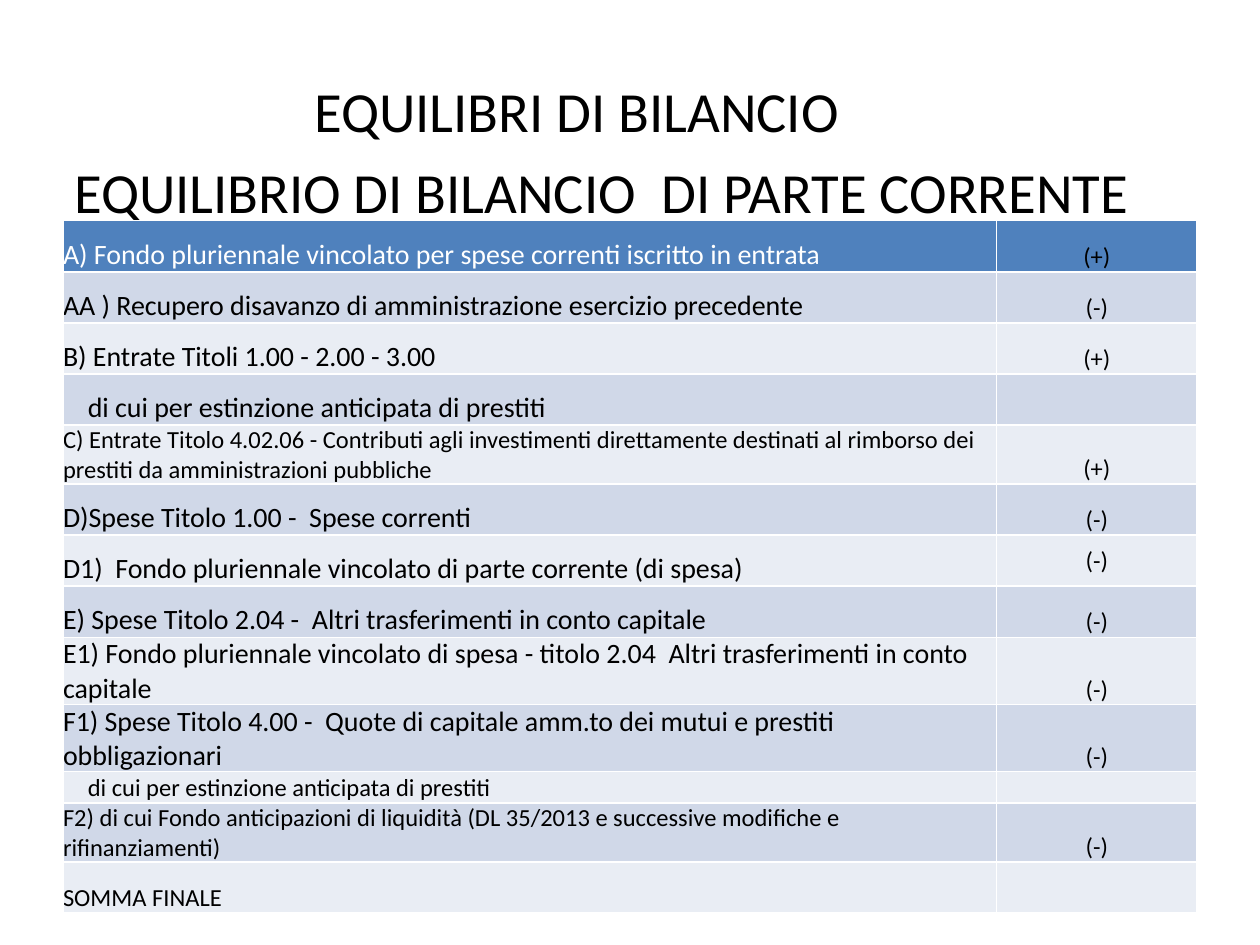
"""Build the slide on the current-account budget balance."""
from dataclasses import dataclass

from pptx import Presentation
from pptx.dml.color import RGBColor
from pptx.enum.text import MSO_ANCHOR, PP_ALIGN
from pptx.util import Cm, Pt


@dataclass(frozen=True)
class Theme:
    font: str = "Calibri"
    title_size: float = 32.4
    large: int = 16
    small: int = 14
    dark: RGBColor = RGBColor(0, 0, 0)
    light: RGBColor = RGBColor(255, 255, 255)
    header: RGBColor = RGBColor(0x4F, 0x81, 0xBD)
    bands: tuple = (RGBColor(0xE9, 0xED, 0xF4), RGBColor(0xD0, 0xD8, 0xE8))


THEME = Theme()
LARGE, SMALL = THEME.large, THEME.small
ROW_HEIGHT, LOW_ROW_HEIGHT = 1.03, 0.63
INDENT = 0.5
TITLE_LINES = (
    ("EQUILIBRI DI BILANCIO", 0),
    ("EQUILIBRIO DI BILANCIO  DI PARTE CORRENTE", 1),
)
BALANCE_ROWS = (
    ("A) Fondo pluriennale vincolato per spese correnti iscritto in entrata", "(+)", LARGE),
    ("AA ) Recupero disavanzo di amministrazione esercizio precedente", "(-)", LARGE),
    ("B) Entrate Titoli 1.00 - 2.00 - 3.00", "(+)", LARGE),
    ("di cui per estinzione anticipata di prestiti", "", LARGE),
    ("C) Entrate Titolo 4.02.06 - Contributi agli investimenti direttamente destinati "
     "al rimborso dei prestiti da amministrazioni pubbliche", "(+)", SMALL),
    ("D)Spese Titolo 1.00 -  Spese correnti", "(-)", LARGE),
    ("D1)  Fondo pluriennale vincolato di parte corrente (di spesa)", "(-)", LARGE),
    ("E) Spese Titolo 2.04 -  Altri trasferimenti in conto capitale", "(-)", LARGE),
    ("E1) Fondo pluriennale vincolato di spesa - titolo 2.04  Altri trasferimenti "
     "in conto capitale", "(-)", LARGE),
    ("F1) Spese Titolo 4.00 -  Quote di capitale amm.to dei mutui e prestiti "
     "obbligazionari", "(-)", LARGE),
    ("di cui per estinzione anticipata di prestiti", "", SMALL),
    ("F2) di cui Fondo anticipazioni di liquidità (DL 35/2013 e successive modifiche "
     "e rifinanziamenti)", "(-)", SMALL),
    ("SOMMA FINALE", "", SMALL),
)


class SlideBuilder:
    def __init__(self, slide, theme):
        self.slide = slide
        self.theme = theme

    def set_text(self, paragraph, text, size, color, alignment):
        paragraph.text = text
        paragraph.alignment = alignment
        for run in paragraph.runs:
            run.font.name = self.theme.font
            run.font.size = Pt(size)
            run.font.bold = False
            run.font.color.rgb = color
        if not text:
            paragraph._p.get_or_add_endParaRPr().set("sz", str(size * 100))

    def indent(self, paragraph, length):
        paragraph._p.get_or_add_pPr().set("marL", str(Cm(length)))

    def add_title(self, lines, left, top, width, height):
        shape = self.slide.shapes.add_textbox(Cm(left), Cm(top), Cm(width), Cm(height))
        frame = shape.text_frame
        frame.word_wrap = True
        frame.margin_left = frame.margin_right = frame.margin_top = frame.margin_bottom = 0
        for index, (text, offset) in enumerate(lines):
            paragraph = frame.add_paragraph() if index else frame.paragraphs[0]
            self.set_text(paragraph, text, self.theme.title_size, self.theme.dark, PP_ALIGN.CENTER)
            if index:
                paragraph.space_before = Pt(7.4)
                self.indent(paragraph, offset)

    def fill_cell(self, cell, text, size, color, fill, alignment):
        cell.margin_left = cell.margin_right = cell.margin_top = cell.margin_bottom = 0
        cell.vertical_anchor = MSO_ANCHOR.BOTTOM
        cell.fill.solid()
        cell.fill.fore_color.rgb = fill
        self.set_text(cell.text_frame.paragraphs[0], text, size, color, alignment)

    def add_balance_table(self, rows, left, top, column_widths):
        theme = self.theme
        table = self.slide.shapes.add_table(
            len(rows), len(column_widths), Cm(left), Cm(top),
            Cm(sum(column_widths)), Cm(ROW_HEIGHT * len(rows))).table
        for column, width in zip(table.columns, column_widths):
            column.width = Cm(width)
        for index, (label, sign, size) in enumerate(rows):
            is_detail = label.startswith("di cui")
            is_low = is_detail and size == theme.small
            table.rows[index].height = Cm(LOW_ROW_HEIGHT if is_low else ROW_HEIGHT)
            fill = theme.bands[index % 2] if index else theme.header
            label_color = theme.dark if index else theme.light
            label_cell, sign_cell = table.cell(index, 0), table.cell(index, 1)
            self.fill_cell(label_cell, label, size, label_color, fill, PP_ALIGN.LEFT)
            self.fill_cell(sign_cell, sign, theme.small, theme.dark, fill, PP_ALIGN.CENTER)
            if is_detail:
                self.indent(label_cell.text_frame.paragraphs[0], INDENT)
            if label.startswith("D1)"):
                sign_cell.vertical_anchor = MSO_ANCHOR.MIDDLE


def main():
    presentation = Presentation()
    presentation.slide_width, presentation.slide_height = Cm(25.4), Cm(19.05)
    slide = presentation.slides.add_slide(presentation.slide_layouts[6])
    builder = SlideBuilder(slide, THEME)
    builder.add_title(TITLE_LINES, 0.18, 1.53, 22.9, 3)
    builder.add_balance_table(BALANCE_ROWS, 1.27, 4.45, (18.82, 4.04))
    presentation.save("out.pptx")


if __name__ == "__main__":
    main()
